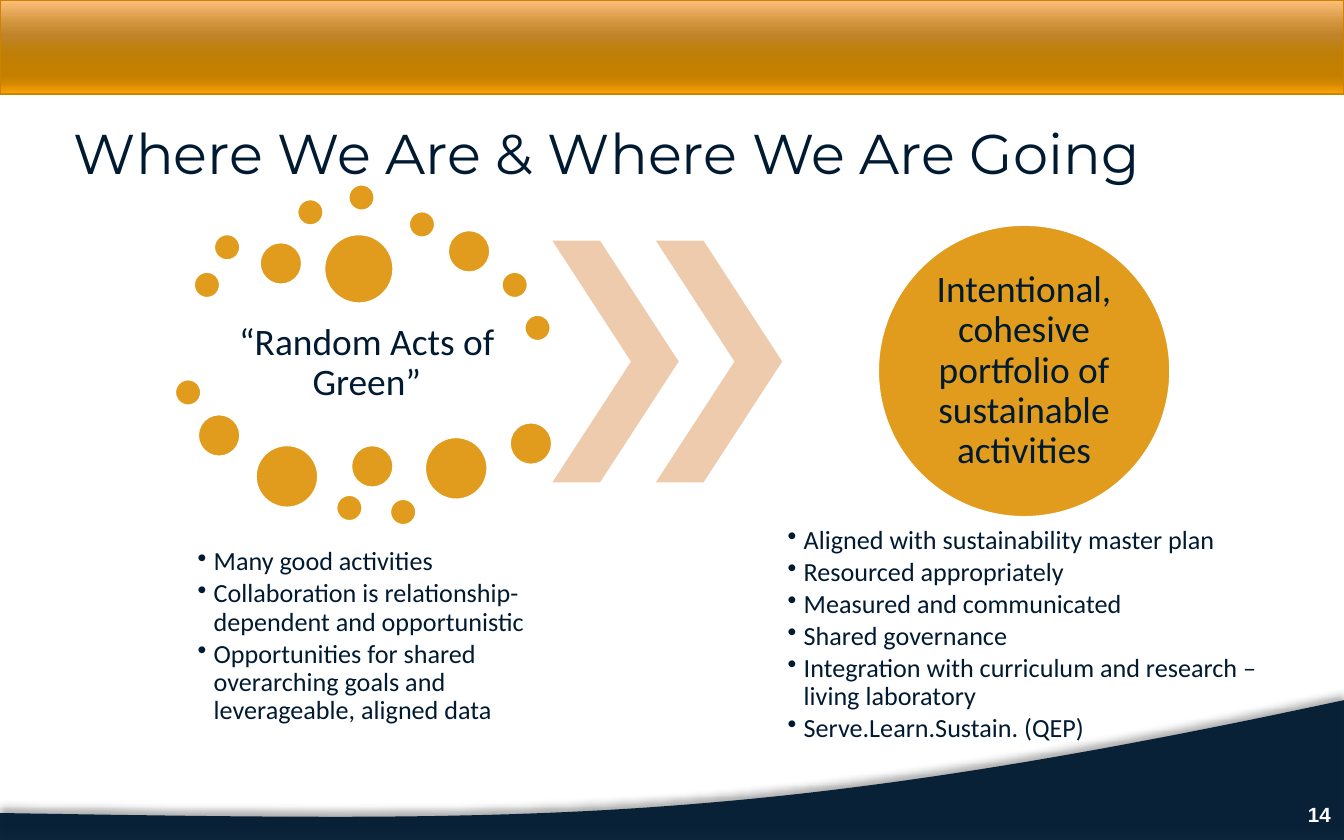
"""Build the slide on where we are and where we are going."""
from dataclasses import dataclass

from lxml.etree import SubElement as Sub
from pptx import Presentation as Deck
from pptx.dml.color import RGBColor as Rgb
from pptx.enum.shapes import MSO_SHAPE as Form
from pptx.enum.text import MSO_ANCHOR as Anchor, PP_ALIGN as Align
from pptx.oxml.ns import qn
from pptx.util import Pt

UNIT = 9144
WIDE, HIGH = 1000, 625


@dataclass(frozen=True)
class Theme:
    navy: str = "001A31"
    gold: str = "E19C1E"
    peach: str = "EECBAC"
    white: str = "FFFFFF"
    black: str = "000000"
    edge: str = "CC8400"
    sheen: tuple = ((0, "FFBE7C"), (25, "D1933A"), (38, "C18329"), (55, "BF7F08"),
                    (80, "C68000"), (88, "D18700"), (100, "FFA507"))
    head: int = 30
    lead: int = 20
    body: int = 14
    note: int = 11
    sans: str = "Calibri"
    show: str = "Montserrat"
    plain: str = "Arial"


def put(item, **vals):
    for key, val in vals.items():
        setattr(item, key, val)


def emu(*vals):
    return [round(val * UNIT) for val in vals]


def tint(node, color, alpha):
    hue = Sub(node, qn("a:srgbClr"), val=color)
    Sub(hue, qn("a:alpha"), val=str(alpha * 1000))


class Page:
    def __init__(self, theme):
        self.theme = theme
        self.deck = Deck()
        put(self.deck, slide_width=WIDE * UNIT, slide_height=HIGH * UNIT)
        self.slide = self.deck.slides.add_slide(self.deck.slide_layouts[6])
        self.shapes = self.slide.shapes

    def shape(self, form, box, fill, line=None, width=1.5):
        item = self.shapes.add_shape(form, *emu(*box))
        item.shadow.inherit = False
        item.fill.solid()
        item.fill.fore_color.rgb = Rgb.from_string(fill)
        if line:
            item.line.color.rgb = Rgb.from_string(line)
            item.line.width = Pt(width)
        else:
            item.line.fill.background()
        return item

    def dot(self, x, y, size):
        return self.shape(Form.OVAL, (x, y, size, size), self.theme.gold, self.theme.white)

    def arrow(self, *box):
        self.shape(Form.CHEVRON, box, self.theme.peach).adjustments[0] = 0.623

    def bar(self, *box):
        item = self.shape(Form.RECTANGLE, box, self.theme.gold, self.theme.edge, 0.75)
        item.fill.gradient()
        item.fill.gradient_angle = 270
        stops = next(item._element.spPr.iter(qn("a:gsLst")))
        for old in list(stops):
            stops.remove(old)
        for place, color in self.theme.sheen:
            stop = Sub(stops, qn("a:gs"), pos=str(place * 1000))
            Sub(stop, qn("a:srgbClr"), val=color)

    def wave(self, ends, curve, steps=60):
        pts = [emu(*pt) for pt in ends]
        for step in range(1, steps + 1):
            t = step / steps
            mix = ((1 - t) ** 3, 3 * t * (1 - t) ** 2, 3 * t * t * (1 - t), t ** 3)
            pts.append(emu(*(sum(m * v for m, v in zip(mix, axis)) for axis in zip(*curve))))
        pen = self.shapes.build_freeform(*pts[0])
        pen.add_line_segments(pts[1:], close=True)
        item = pen.convert_to_shape()
        item.shadow.inherit = False
        item.line.fill.background()
        item.fill.solid()
        item.fill.fore_color.rgb = Rgb.from_string(self.theme.navy)
        props = item._element.spPr
        hue = props.find(qn("a:solidFill"))[0]
        Sub(hue, qn("a:alpha"), val="95000")
        cast = Sub(props.find(qn("a:effectLst")), qn("a:outerShdw"), blurRad=str(Pt(4)),
                   dist=str(Pt(3.5)), dir="16200000", algn="b", rotWithShape="0")
        tint(cast, self.theme.black, 35)

    def label(self, item, lines, size, font=None, color=None, align=Align.LEFT,
              anchor=Anchor.MIDDLE, pad=(0, 0), bold=False, space=1.0, dots=False):
        frame = item.text_frame
        side, top = emu(*pad)
        put(frame, word_wrap=True, vertical_anchor=anchor, margin_left=side,
            margin_right=side, margin_top=top, margin_bottom=top)
        for num, line in enumerate(lines):
            para = frame.add_paragraph() if num else frame.paragraphs[0]
            if dots:
                props = para._p.get_or_add_pPr()
                props.set("marL", str(12 * UNIT))
                props.set("indent", str(-12 * UNIT))
                Sub(props, qn("a:buChar"), char="•")
            put(para, alignment=align, line_spacing=space, space_after=Pt(2 if dots else 0))
            run = para.add_run()
            run.text = line
            put(run.font, size=Pt(size), name=font or self.theme.sans, bold=bold)
            run.font.color.rgb = Rgb.from_string(color or self.theme.navy)

    def text(self, box, lines, size, **style):
        self.label(self.shapes.add_textbox(*emu(*box)), lines, size, **style)

    def list(self, box, lines):
        self.text(box, lines, self.theme.body, anchor=Anchor.TOP, pad=(2, 2),
                  space=0.9, dots=True)


DOTS = {
    20: ((144, 202), (159, 174), (221, 148), (259, 137), (304, 157), (373, 202),
         (390, 234), (130, 282), (250, 368), (290, 371)),
    32: ((193, 180), (333, 171), (147, 308), (261, 331), (379, 314)),
    47: ((190, 331), (316, 325)),
    52: ((241, 174),),
}
NOW = ("Many good activities",
       "Collaboration is relationship-dependent and opportunistic",
       "Opportunities for shared overarching goals and leverageable, aligned data")
NEXT = ("Aligned with sustainability master plan",
        "Resourced appropriately",
        "Measured and communicated",
        "Shared governance",
        "Integration with curriculum and research – living laboratory",
        "Serve.Learn.Sustain. (QEP)")


def main():
    theme = Theme()
    page = Page(theme)
    page.bar(0, 0, WIDE, 70)
    page.wave(((0, 605), (0, HIGH), (WIDE, HIGH), (WIDE, 521)),
              ((WIDE, 521), (559, 616), (391, 611), (0, 605)))
    page.text((50, 61, 913, 104), ["Where We Are & Where We Are Going"], theme.head,
              font=theme.show, pad=(5, 5))
    page.text((917, 592, 83, 22), ["14"], theme.note, font=theme.plain, color=theme.white,
              align=Align.RIGHT, anchor=Anchor.TOP, pad=(10, 5), bold=True)
    page.text((145, 228, 256, 85), ["“Random Acts of Green”"], theme.lead,
              align=Align.CENTER, pad=(3, 3), space=0.9)
    page.list((145, 406, 256, 158), NOW)
    for size, spots in DOTS.items():
        for x, y in spots:
            page.dot(x, y, size)
    for x in (411, 488):
        page.arrow(x, 179, 94, 180)
    goal = page.dot(653, 167, 218)
    page.label(goal, ["Intentional, cohesive portfolio of sustainable activities"],
               theme.lead, align=Align.CENTER, space=0.9)
    page.list((584, 390, 360, 158), NEXT)
    page.deck.save("out.pptx")


if __name__ == "__main__":
    main()
